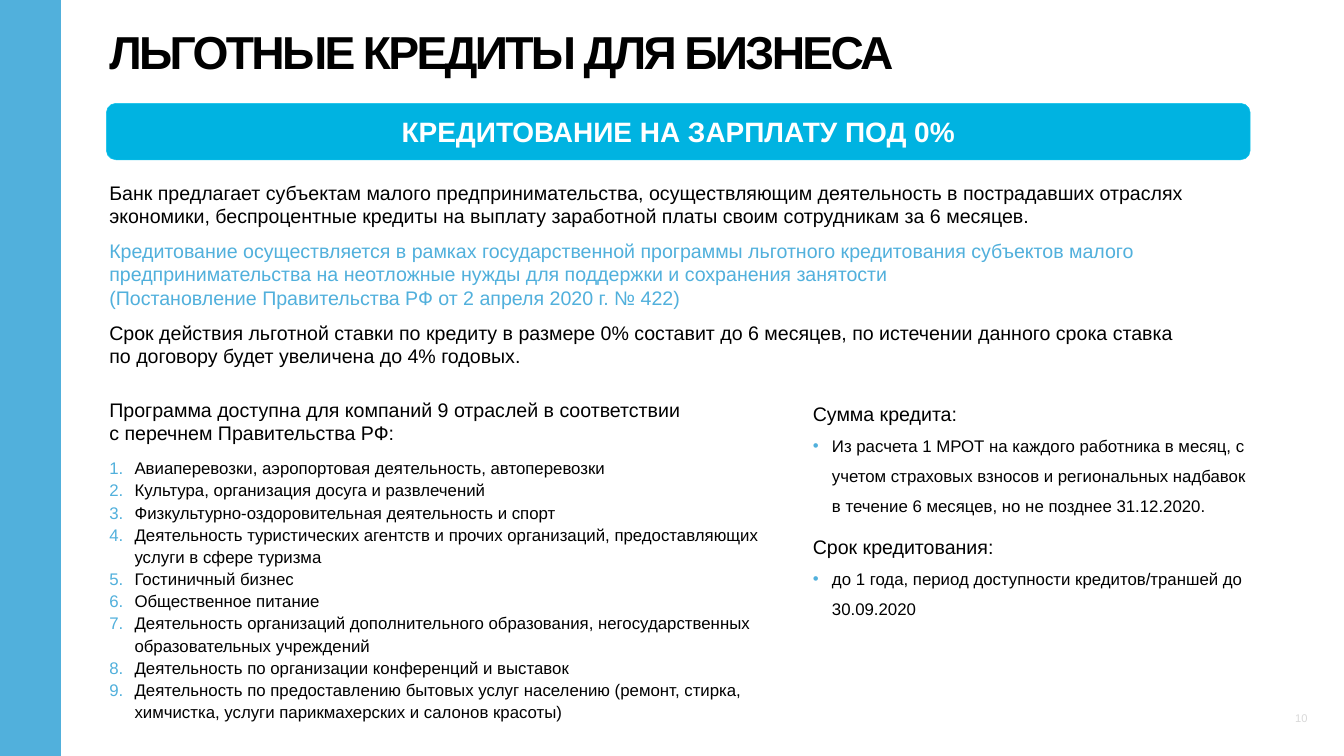
"""Build the slide on preferential business loans."""
from copy import deepcopy

from lxml.etree import SubElement
from pptx import Presentation
from pptx.dml.color import RGBColor
from pptx.enum.shapes import MSO_SHAPE as SHAPE
from pptx.enum.text import MSO_ANCHOR as ANCHOR, MSO_AUTO_SIZE as AUTO, PP_ALIGN as ALIGN
from pptx.oxml.ns import qn
from pptx.util import Pt

PX = 9144
COLORS = {"text": "000000", "accent": "51B0DC", "banner": "00B3E1",
          "banner_line": "0DC3EC", "white": "FFFFFF", "number": "D9D9D9"}
LEFT, RIGHT_COLUMN, COLUMN_W = 211, 1607, 874

TITLE = "ЛЬГОТНЫЕ КРЕДИТЫ ДЛЯ БИЗНЕСА"
BANNER = "КРЕДИТОВАНИЕ НА ЗАРПЛАТУ ПОД 0%"
INTRO = [
    ("Банк предлагает субъектам малого предпринимательства, осуществляющим деятельность "
     "в пострадавших отраслях экономики, беспроцентные кредиты на выплату заработной платы "
     "своим сотрудникам за 6 месяцев.", "text"),
    ("Кредитование осуществляется в рамках государственной программы льготного кредитования "
     "субъектов малого предпринимательства на неотложные нужды для поддержки и сохранения "
     "занятости\n(Постановление Правительства РФ от 2 апреля 2020 г. № 422)", "accent"),
    ("Срок действия льготной ставки по кредиту в размере 0% составит до 6 месяцев, "
     "по истечении данного срока ставка\nпо договору будет увеличена до 4% годовых.", "text"),
]
INDUSTRIES_HEAD = ("Программа доступна для компаний 9 отраслей в соответствии\n"
                   "с перечнем Правительства РФ:")
INDUSTRIES = [
    "Авиаперевозки, аэропортовая деятельность, автоперевозки",
    "Культура, организация досуга и развлечений",
    "Физкультурно-оздоровительная деятельность и спорт",
    "Деятельность туристических агентств и прочих организаций, предоставляющих услуги "
    "в сфере туризма",
    "Гостиничный бизнес",
    "Общественное питание",
    "Деятельность организаций дополнительного образования, негосударственных "
    "образовательных учреждений",
    "Деятельность по организации конференций и выставок",
    "Деятельность по предоставлению бытовых услуг населению (ремонт, стирка, химчистка, "
    "услуги парикмахерских и салонов красоты)",
]
TERMS = [
    (768, 264, "Сумма кредита:",
     "Из расчета 1 МРОТ на каждого работника в месяц, с учетом страховых взносов "
     "и региональных надбавок в течение 6 месяцев, но не позднее 31.12.2020."),
    (1032, 195, "Срок кредитования:",
     "до 1 года, период доступности кредитов/траншей до 30.09.2020"),
]


def rgb(name):
    return RGBColor.from_string(COLORS[name])


def px(*lengths):
    return [n * PX for n in lengths]


def frame(sp, margin=6, anchor=ANCHOR.TOP, wrap=True):
    tf = sp.text_frame
    tf.auto_size = AUTO.NONE
    tf.word_wrap = wrap
    tf.vertical_anchor = anchor
    tf.margin_left = tf.margin_top = tf.margin_right = tf.margin_bottom = margin * PX
    return tf


def place(sp, *box):
    sp.left, sp.top, sp.width, sp.height = px(*box)
    return sp


def write(tf, text, size=28, color="text", bold=False, align=ALIGN.LEFT, line=1.0,
          before=0, after=0, indent=0, bullet=None, spacing=None):
    p = tf.add_paragraph() if tf.text else tf.paragraphs[0]
    p.text = text
    p.alignment, p.line_spacing = align, line
    p.space_before, p.space_after = Pt(before), Pt(after)
    pPr = p._p.get_or_add_pPr()
    pPr.set("marL", str(indent * PX))
    pPr.set("indent", str(-indent * PX))
    if bullet:
        buClr = SubElement(pPr, qn("a:buClr"))
        SubElement(buClr, qn("a:srgbClr"), val=COLORS["accent"])
        SubElement(pPr, qn("a:buFont"), typeface="Arial")
    if bullet == "1.":
        SubElement(pPr, qn("a:buAutoNum"), type="arabicPeriod")
    elif bullet:
        SubElement(pPr, qn("a:buChar"), char=bullet)
    else:
        SubElement(pPr, qn("a:buNone"))
    for r in p.runs:
        r.font.name, r.font.size, r.font.bold = "Arial", Pt(size), bold
        r.font.color.rgb = rgb(color)
        if spacing:
            r.font._element.set("spc", str(spacing))
    for br in p._p.findall(qn("a:br")):
        br.append(deepcopy(p.runs[0].font._element))


def add_shape(shapes, kind, box, fill, line=None):
    sp = shapes.add_shape(kind, *px(*box))
    sp.shadow.inherit = False
    sp.fill.solid()
    sp.fill.fore_color.rgb = rgb(fill)
    if line:
        sp.line.color.rgb = rgb(line)
        sp.line.width = Pt(0.75)
    else:
        sp.line.fill.background()
    return sp


def main():
    prs = Presentation()
    prs.slide_width, prs.slide_height = px(2667, 1500)
    s = prs.slides.add_slide(prs.slide_layouts[1])
    shapes = s.shapes

    add_shape(shapes, SHAPE.RECTANGLE, (0, 0, 121, 1500), "accent")
    title = place(shapes.title, LEFT, 61, 2203, 100)
    write(frame(title), TITLE, size=66, bold=True, line=0.8, spacing=-380)

    banner = add_shape(shapes, SHAPE.ROUNDED_RECTANGLE, (LEFT, 205, 2270, 112),
                       "banner", "banner_line")
    banner.adjustments[0] = 0.17
    write(frame(banner, margin=0, anchor=ANCHOR.MIDDLE), BANNER,
          size=40, color="white", bold=True, align=ALIGN.CENTER)

    tf = frame(shapes.add_textbox(*px(LEFT, 352, 2299, 398)))
    for i, (text, color) in enumerate(INTRO):
        write(tf, text, color=color, before=16 if i else 0)

    tf = frame(place(s.placeholders[1], LEFT, 783, 1306, 658))
    write(tf, INDUSTRIES_HEAD, after=16)
    for text in INDUSTRIES:
        write(tf, text, size=24, line=1.1, indent=50, bullet="1.")

    for top, height, head, text in TERMS:
        tf = frame(shapes.add_textbox(*px(RIGHT_COLUMN, top, COLUMN_W, height)))
        write(tf, head, line=1.5)
        write(tf, text, size=24, line=1.5, indent=38, bullet="•")

    number = shapes.add_textbox(*px(2563, 1405, 39, 38))
    write(frame(number, wrap=False), "10", size=16, color="number", align=ALIGN.CENTER)

    prs.save("out.pptx")


if __name__ == "__main__":
    main()
